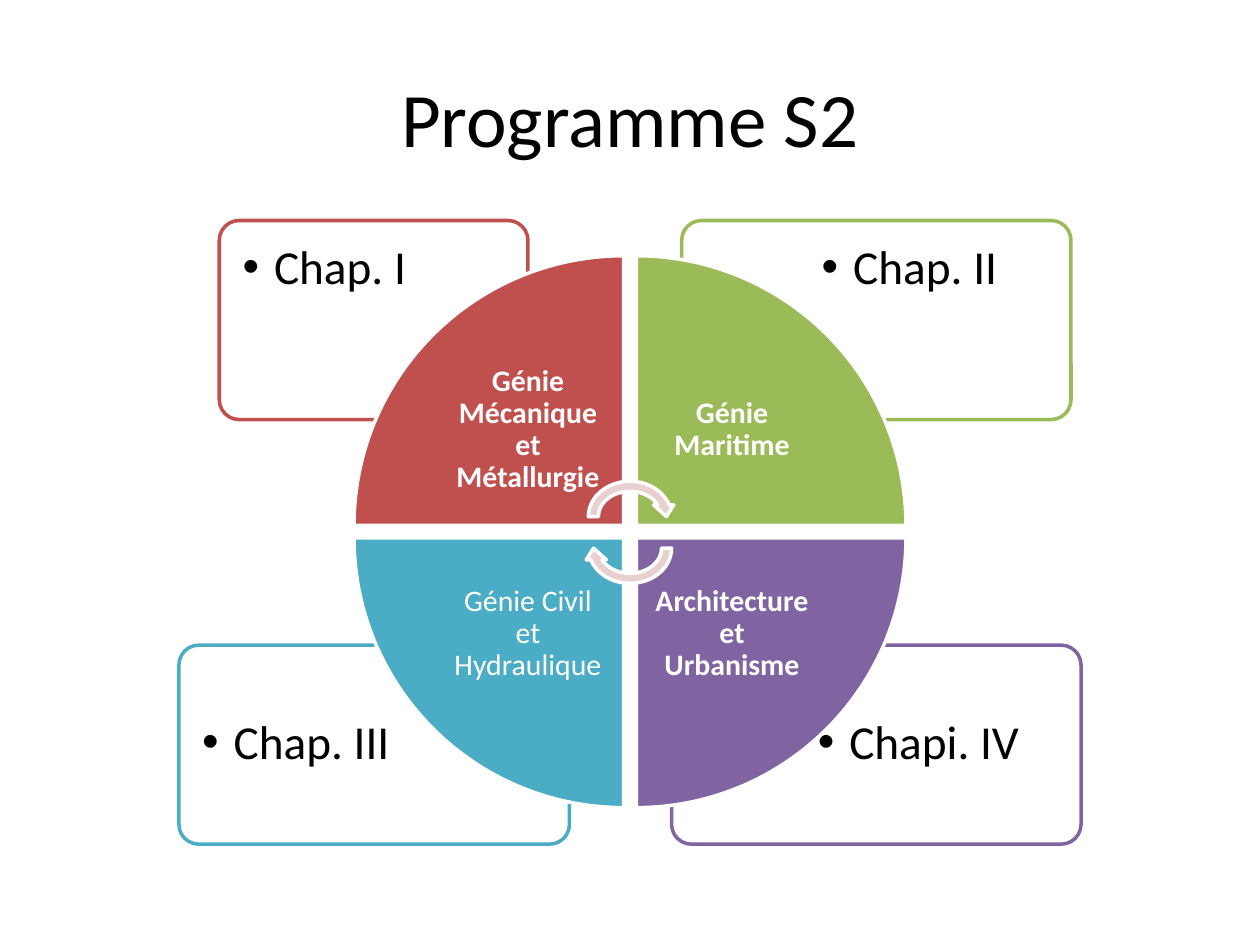
from lxml import etree
from pptx import Presentation
from pptx import util as u
from pptx.dml.color import RGBColor
from pptx.enum import shapes, text
from pptx.oxml.ns import qn

COLORS = {
    "red": "C0504D",
    "green": "9BBB59",
    "blue": "4BACC6",
    "purple": "8064A2",
    "arrow": "E8D0D0",
    "white": "FFFFFF",
    "black": "000000",
}
FONT = "Calibri"
WEDGE = 2.14
WEDGE_GAP = 0.1
CIRCLE_LEFT, CIRCLE_TOP = 2.81, 2.03
CARD_HEIGHT = 1.58
CARD_INSET = 0.035

# card label, card left, card width, wedge label, color, bold, column, row, rotation
CHAPTERS = [
    ("Chap. I", 1.74, 2.45, "Génie Mécanique et Métallurgie", "red", True, 0, 0, 0),
    ("Chap. II", 5.41, 3.09, "Génie Maritime", "green", True, 1, 0, 90),
    ("Chapi. IV", 5.33, 3.25, "Architecture et Urbanisme", "purple", True, 1, 1, 180),
    ("Chap. III", 1.42, 3.1, "Génie Civil et Hydraulique", "blue", False, 0, 1, 270),
]


def color(name):
    return RGBColor.from_string(COLORS[name])


def format_runs(paragraph, size, name, bold=False):
    for run in paragraph.runs:
        run.font.name = FONT
        run.font.size = u.Pt(size)
        run.font.bold = bold
        run.font.color.rgb = color(name)


def add_outlined(slide, preset, box, fill, line):
    shape = slide.shapes.add_shape(preset, *map(u.Inches, box))
    shape.shadow.inherit = False
    shape.fill.solid()
    shape.fill.fore_color.rgb = color(fill)
    shape.line.color.rgb = color(line)
    shape.line.width = u.Pt(2)
    return shape


def add_label(slide, box, label, inset, anchor):
    frame = slide.shapes.add_textbox(*map(u.Inches, box)).text_frame
    frame.word_wrap = True
    frame.vertical_anchor = anchor
    frame.margin_left = frame.margin_right = u.Inches(inset)
    frame.margin_top = frame.margin_bottom = u.Inches(inset)
    frame.text = label
    paragraph = frame.paragraphs[0]
    paragraph.line_spacing = 0.9
    return paragraph


def add_bullet(paragraph):
    properties = paragraph._p.get_or_add_pPr()
    properties.set("marL", str(u.Inches(0.25)))
    properties.set("indent", str(-u.Inches(0.25)))
    etree.SubElement(properties, qn("a:buFont"), typeface="Arial")
    etree.SubElement(properties, qn("a:buChar"), char="•")


def add_title(slide, box, label):
    title = slide.shapes.title
    title.left, title.top, title.width, title.height = map(u.Inches, box)
    title.text_frame.text = label
    title.text_frame.vertical_anchor = text.MSO_ANCHOR.MIDDLE
    paragraph = title.text_frame.paragraphs[0]
    paragraph.alignment = text.PP_ALIGN.CENTER
    format_runs(paragraph, 44, "black")


def add_card(slide, box, label, line, column, row):
    left, top, width, height = box
    card = add_outlined(slide, shapes.MSO_SHAPE.ROUNDED_RECTANGLE, box, "white", line)
    card.adjustments[0] = 0.1
    label_box = (
        left + column * 0.3 * width + CARD_INSET,
        top + row * 0.25 * height + CARD_INSET,
        0.7 * width - 2 * CARD_INSET,
        0.75 * height - 2 * CARD_INSET,
    )
    paragraph = add_label(slide, label_box, label, 0.15, text.MSO_ANCHOR.TOP)
    add_bullet(paragraph)
    format_runs(paragraph, 27, "black")


def add_wedge(slide, box, label, fill, bold, column, row, rotation):
    left, top, size, _ = box
    wedge = add_outlined(slide, shapes.MSO_SHAPE.PIE_WEDGE, box, fill, "white")
    wedge.rotation = rotation
    label_size = 0.71 * size
    outer = size - label_size
    label_box = (left + (1 - column) * outer, top + (1 - row) * outer, label_size, label_size)
    paragraph = add_label(slide, label_box, label, 0.13, text.MSO_ANCHOR.MIDDLE)
    paragraph.alignment = text.PP_ALIGN.CENTER
    format_runs(paragraph, 17, "white", bold)


def add_cycle_arrows(slide, box):
    left, top, width, height = box
    for offset, rotation in ((0, 0), (0.25, 180)):
        arrow = add_outlined(slide, shapes.MSO_SHAPE.CIRCULAR_ARROW,
                             (left, top + offset, width, height), "arrow", "white")
        arrow.rotation = rotation


def main():
    presentation = Presentation()
    presentation.slide_width = u.Inches(10)
    presentation.slide_height = u.Inches(7.5)
    slide = presentation.slides.add_slide(presentation.slide_layouts[5])
    add_title(slide, (0.5, 0.3, 9, 1.25), "Programme S2")
    for label, left, width, _, name, _, column, row, _ in CHAPTERS:
        top = (1.75, 5.12)[row]
        add_card(slide, (left, top, width, CARD_HEIGHT), label, name, column, row)
    step = WEDGE + WEDGE_GAP
    for _, _, _, label, name, bold, column, row, rotation in CHAPTERS:
        box = (CIRCLE_LEFT + column * step, CIRCLE_TOP + row * step, WEDGE, WEDGE)
        add_wedge(slide, box, label, name, bold, column, row, rotation)
    add_cycle_arrows(slide, (4.63, 3.78, 0.74, 0.64))
    presentation.save("out.pptx")


if __name__ == "__main__":
    main()
